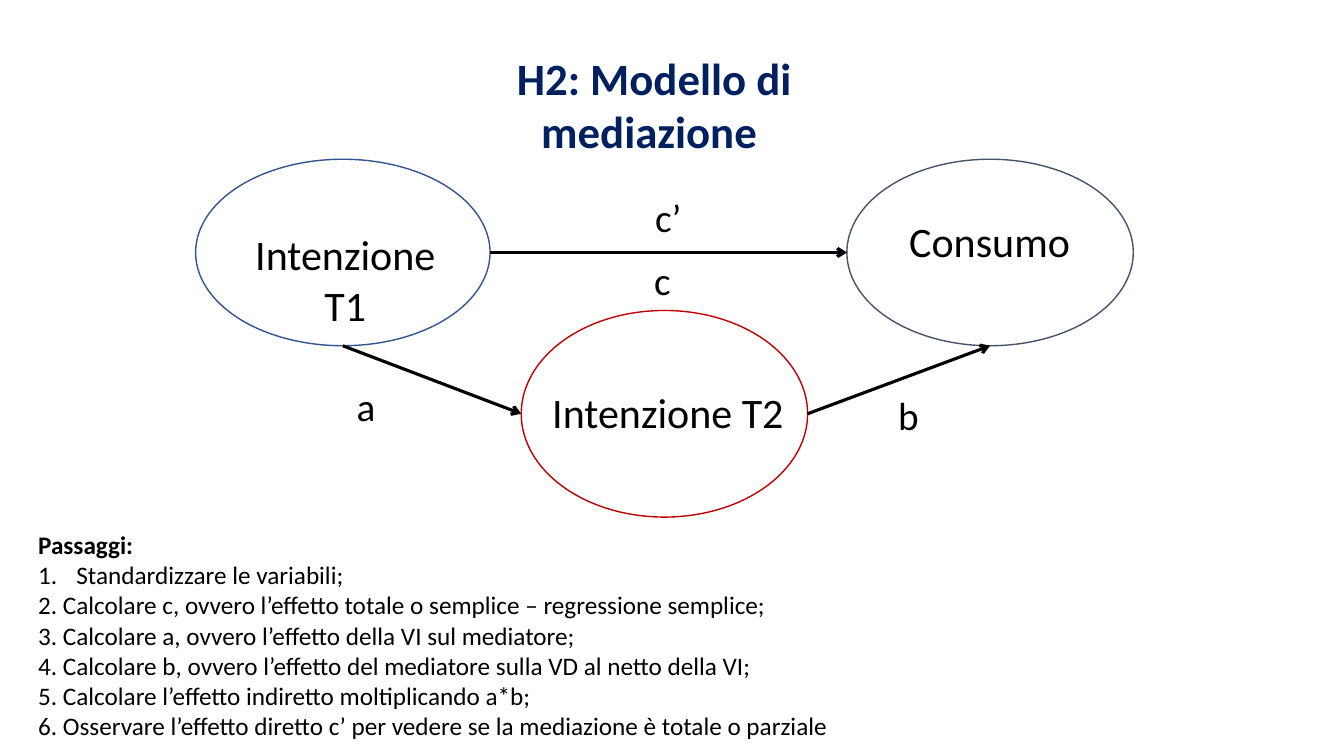
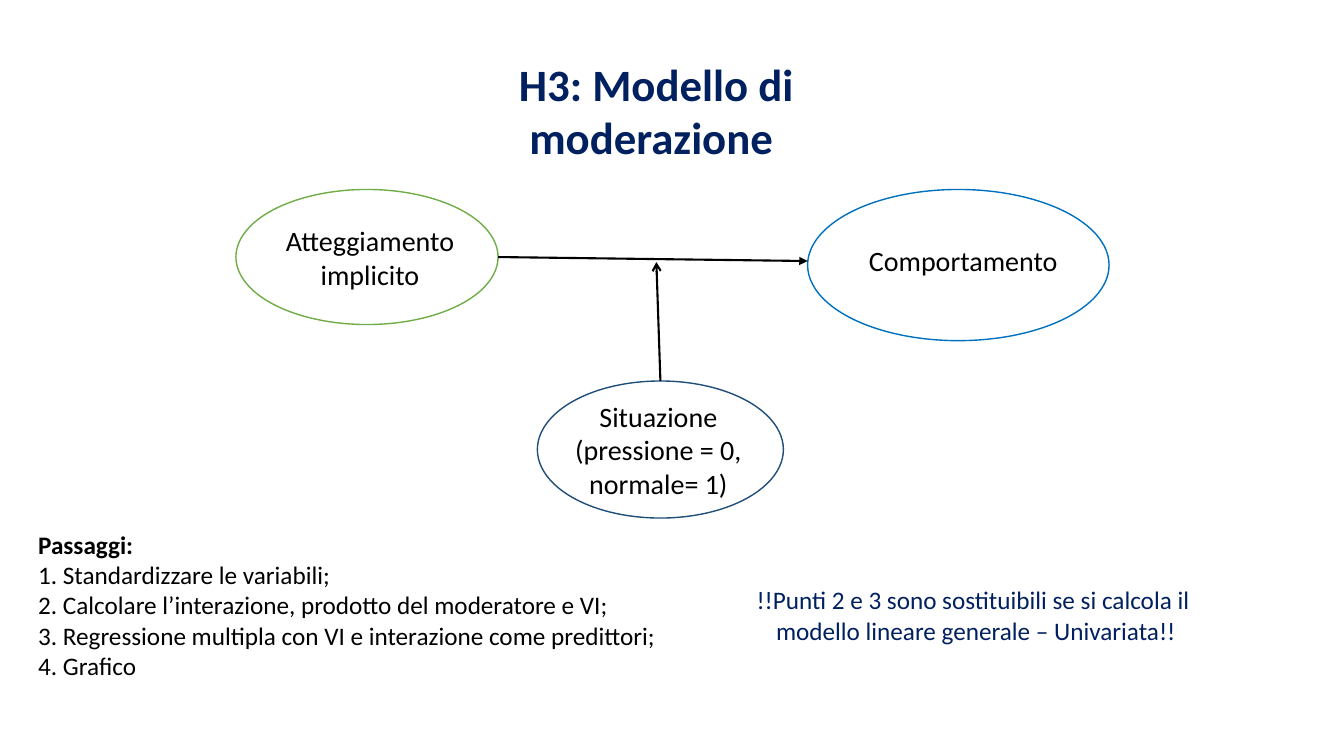
from dataclasses import dataclass

import pptx
import pptx.dml.color
import pptx.enum.shapes
import pptx.enum.text
import pptx.oxml.ns
import pptx.util
from lxml import etree

Inches = pptx.util.Inches
Pt = pptx.util.Pt
PP_ALIGN = pptx.enum.text.PP_ALIGN


@dataclass(frozen=True)
class Theme:
    font: str = "Calibri"
    ink: str = "000000"
    navy: str = "002060"
    title_size: int = 32
    letter_size: int = 28
    note_size: int = 18
    outline: float = 1
    steps_left: float = 0.28
    steps_top: float = 5.2


THEME = Theme()

# Boxes are (left, top, width, height) in inches.
# Label boxes may end with a wider side margin, which narrows the text.
SLIDES = [
    {
        "title": ("H2: Modello di mediazione ", (3.91, 0.45, 5.16, 0.64)),
        "ovals": {
            "intention 1": ((1.94, 1.58, 2.92, 1.85), "325491"),
            "intention 2": ((5.17, 3.08, 2.84, 2.05), "C00000"),
            "consumption": ((8.4, 1.58, 2.84, 1.85), "44546A"),
        },
        "oval_fill": None,
        "label_size": 30,
        "labels": [
            (["Intenzione T1"], (2.18, 2.22, 2.49, 0.61), 0.25),
            (["Consumo"], (8.87, 2.09, 1.89, 0.61), 0.1),
            (["Intenzione T2"], (5.25, 3.79, 2.75, 0.61), 0.1),
        ],
        "arrow_width": 2.25,
        "arrows": [
            (("intention 1", "right"), ("consumption", "left"), "arrow"),
            (("intention 2", "right"), ("consumption", "bottom"), "arrow"),
            (("intention 1", "bottom"), ("intention 2", "left"), "arrow"),
        ],
        "letters": [("c’", 6.4, 1.87), ("c", 6.39, 2.49), ("a", 3.44, 3.74), ("b", 8.81, 3.83)],
        "steps": [
            "Standardizzare le variabili;",
            "2. Calcolare c, ovvero l’effetto totale o semplice – regressione semplice;",
            "3. Calcolare a, ovvero l’effetto della VI sul mediatore;",
            "4. Calcolare b, ovvero l’effetto del mediatore sulla VD al netto della VI;",
            "5. Calcolare l’effetto indiretto moltiplicando a*b;",
            "6. Osservare l’effetto diretto c’ per vedere se la mediazione è totale o parziale",
        ],
        "auto_number_first": True,
        "steps_size": (8.3, 2.22),
        "remark": None,
    },
    {
        "title": ("H3: Modello di moderazione ", (3.79, 0.51, 5.44, 0.64)),
        "ovals": {
            "attitude": ((2.34, 1.88, 2.6, 1.34), "70AD47"),
            "behaviour": ((8.01, 1.88, 2.99, 1.5), "0070C0"),
            "situation": ((5.33, 3.78, 2.44, 1.36), "1F4E79"),
        },
        "oval_fill": "FFFFFF",
        "label_size": 20,
        "labels": [
            (["Atteggiamento", "implicito"], (2.41, 2.17, 2.52, 0.77), 0.1),
            (["Situazione", "(pressione = 0, normale= 1)"], (5.15, 3.91, 2.76, 1.11), 0.1),
            (["Comportamento "], (8.01, 2.37, 3.15, 0.44), 0.1),
        ],
        "arrow_width": 1.5,
        "arrows": [
            (("situation", "top"), (6.51, 2.6), "arrow"),
            (("attitude", "right"), (8.01, 2.59), "triangle"),
        ],
        "letters": [],
        "steps": [
            "1. Standardizzare le variabili;",
            "2. Calcolare l’interazione, prodotto del moderatore e VI;",
            "3. Regressione multipla con VI e interazione come predittori;",
            "4. Grafico",
        ],
        "auto_number_first": False,
        "steps_size": (6.5, 1.62),
        "remark": (
            ["!!Punti 2 e 3 sono sostituibili se si calcola il ",
             "modello lineare generale – Univariata!!"],
            (6.85, 5.75, 5.66, 0.71),
        ),
    },
]

SIDES = {"top": (0.5, 0), "left": (0, 0.5), "bottom": (0.5, 1), "right": (1, 0.5)}


def rgb(value):
    return pptx.dml.color.RGBColor.from_string(value)


def add_text(slide, lines, box, size, color=THEME.ink, align=PP_ALIGN.CENTER,
             bold=False, margin=0.1):
    frame = slide.shapes.add_textbox(*map(Inches, box)).text_frame
    frame.word_wrap = True
    frame.margin_left = frame.margin_right = Inches(margin)
    for index, line in enumerate(lines):
        paragraph = frame.add_paragraph() if index else frame.paragraphs[0]
        paragraph.text = line
        paragraph.alignment = align
        paragraph.font.name = THEME.font
        paragraph.font.size = Pt(size)
        paragraph.font.bold = bold
        paragraph.font.color.rgb = rgb(color)
    return frame


def add_oval(slide, box, outline, fill):
    oval = slide.shapes.add_shape(pptx.enum.shapes.MSO_SHAPE.OVAL, *map(Inches, box))
    oval.shadow.inherit = False
    if fill:
        oval.fill.solid()
        oval.fill.fore_color.rgb = rgb(fill)
    else:
        oval.fill.background()
    oval.line.color.rgb = rgb(outline)
    oval.line.width = Pt(THEME.outline)


def locate(end, ovals):
    """Turn an (oval, side) pair into a point; a plain point stays as it is."""
    if end[0] not in ovals:
        return end
    name, side = end
    left, top, width, height = ovals[name][0]
    across, down = SIDES[side]
    return left + across * width, top + down * height


def add_arrow(slide, start, end, width, head):
    arrow = slide.shapes.add_connector(
        pptx.enum.shapes.MSO_CONNECTOR.STRAIGHT, *map(Inches, (*start, *end)))
    arrow.line.color.rgb = rgb(THEME.ink)
    arrow.line.width = Pt(width)
    qn = pptx.oxml.ns.qn
    properties = arrow.element.spPr
    etree.SubElement(properties.find(qn("a:ln")), qn("a:tailEnd"), type=head)
    etree.SubElement(properties, qn("a:effectLst"))


def add_steps(slide, steps, size, auto_number_first):
    frame = add_text(slide, ["Passaggi:", *steps], (THEME.steps_left, THEME.steps_top, *size),
                     THEME.note_size, align=PP_ALIGN.LEFT)
    heading, first_step = frame.paragraphs[:2]
    heading.font.bold = True
    if auto_number_first:
        properties = first_step._p.get_or_add_pPr()
        indent = Inches(0.38)
        properties.set("marL", str(indent))
        properties.set("indent", str(-indent))
        number = etree.Element(pptx.oxml.ns.qn("a:buAutoNum"), type="arabicPeriod")
        properties.insert(0, number)


def build_slide(deck, content):
    slide = deck.slides.add_slide(deck.slide_layouts[6])
    title, title_box = content["title"]
    add_text(slide, [title], title_box, THEME.title_size, THEME.navy, bold=True, margin=0.7)
    ovals = content["ovals"]
    for box, outline in ovals.values():
        add_oval(slide, box, outline, content["oval_fill"])
    for lines, box, margin in content["labels"]:
        add_text(slide, lines, box, content["label_size"], margin=margin)
    for start, end, head in content["arrows"]:
        add_arrow(slide, locate(start, ovals), locate(end, ovals), content["arrow_width"], head)
    for letter, left, top in content["letters"]:
        add_text(slide, [letter], (left, top, 0.6, 0.57), THEME.letter_size, align=PP_ALIGN.LEFT)
    add_steps(slide, content["steps"], content["steps_size"], content["auto_number_first"])
    if content["remark"]:
        lines, box = content["remark"]
        add_text(slide, lines, box, THEME.note_size, THEME.navy)


def main():
    deck = pptx.Presentation()
    deck.slide_width, deck.slide_height = Inches(13.33), Inches(7.5)
    for content in SLIDES:
        build_slide(deck, content)
    deck.save("out.pptx")


if __name__ == "__main__":
    main()
